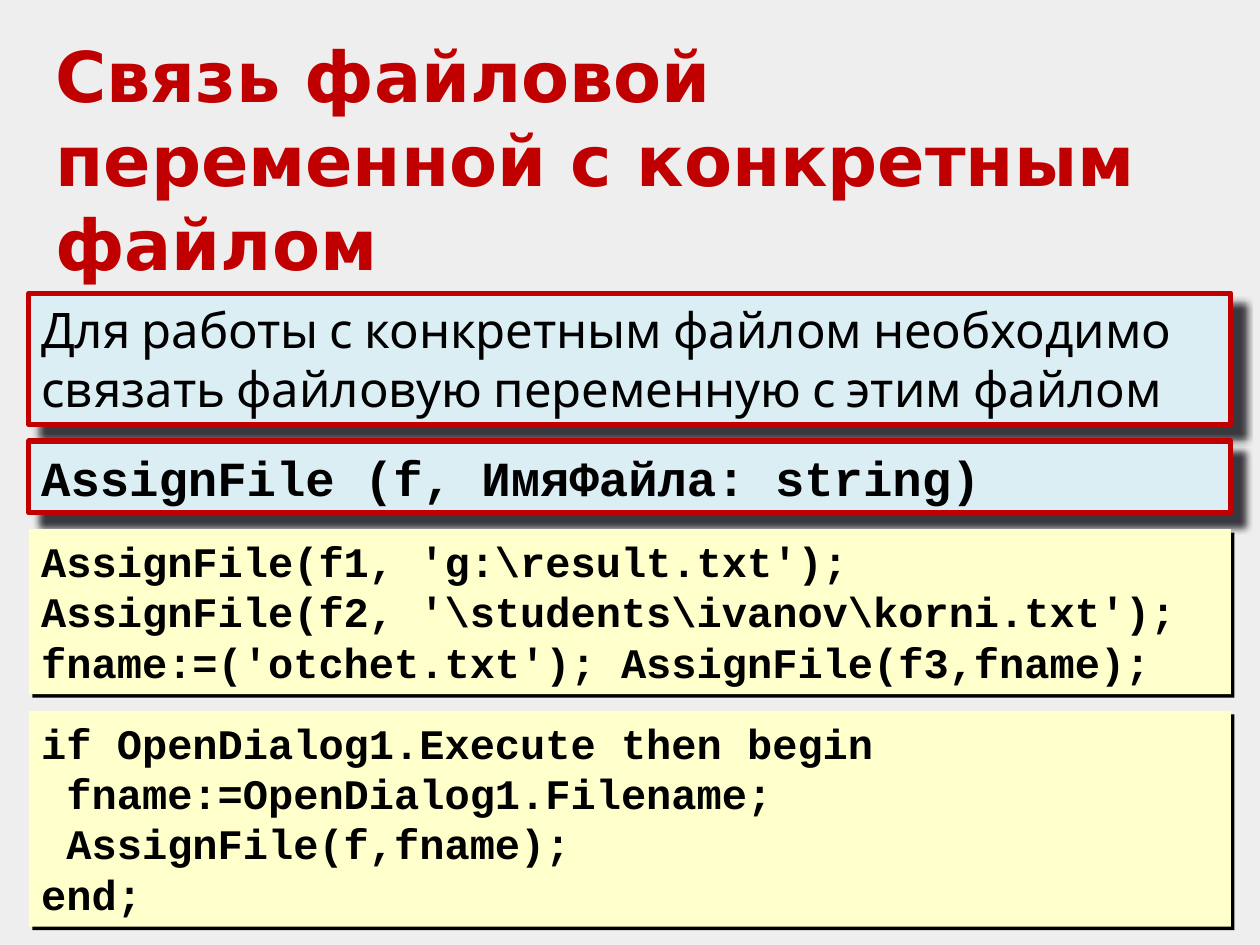
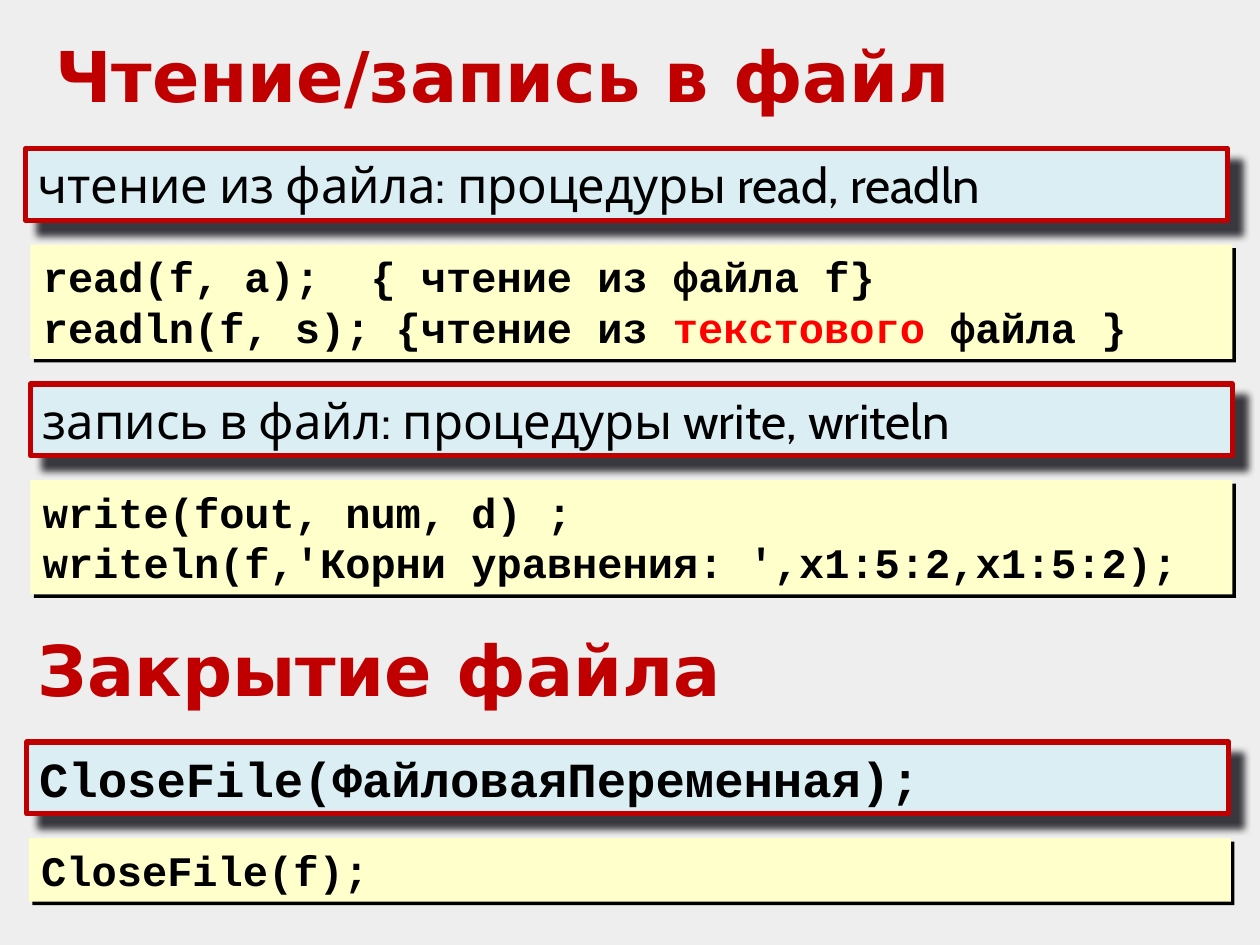
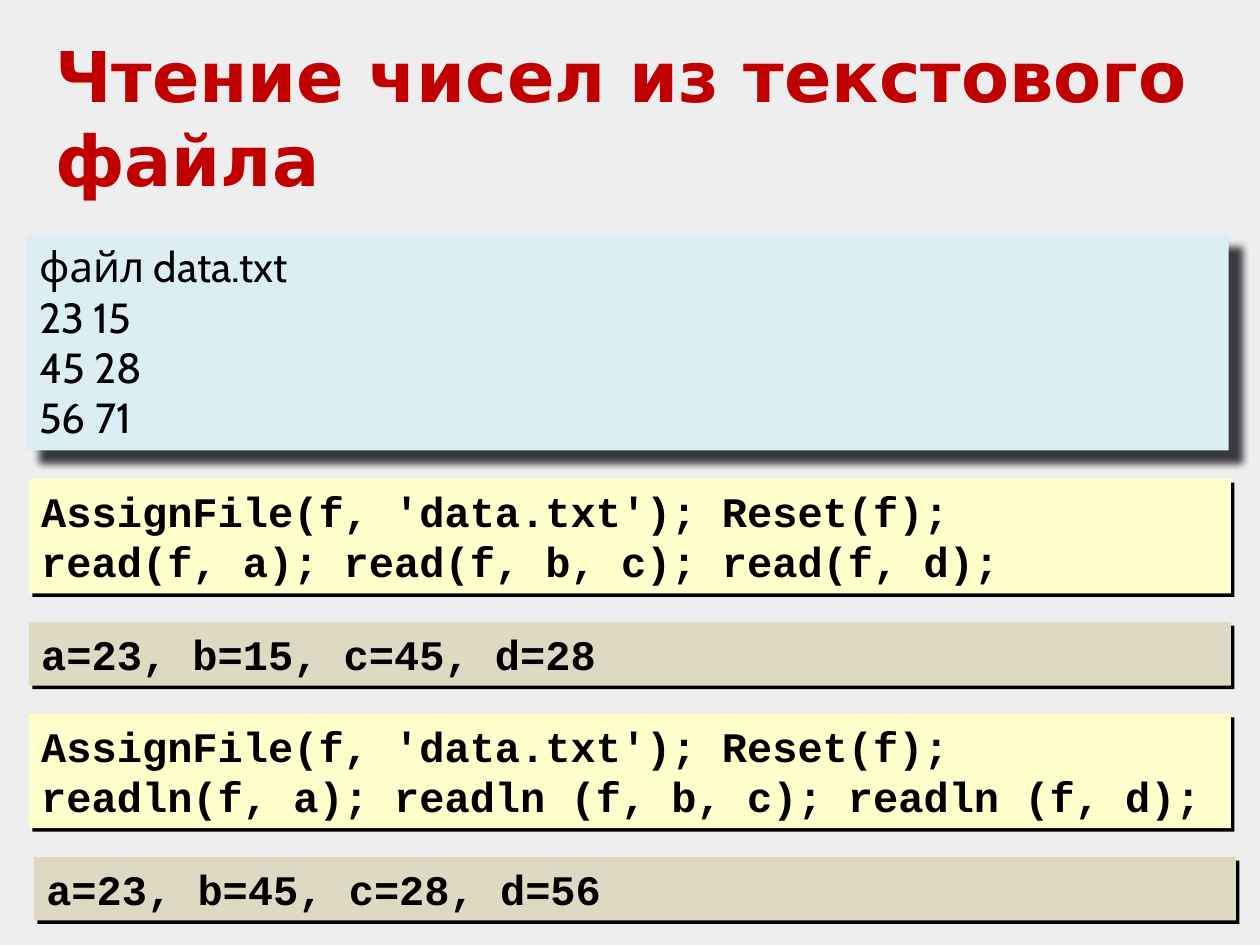
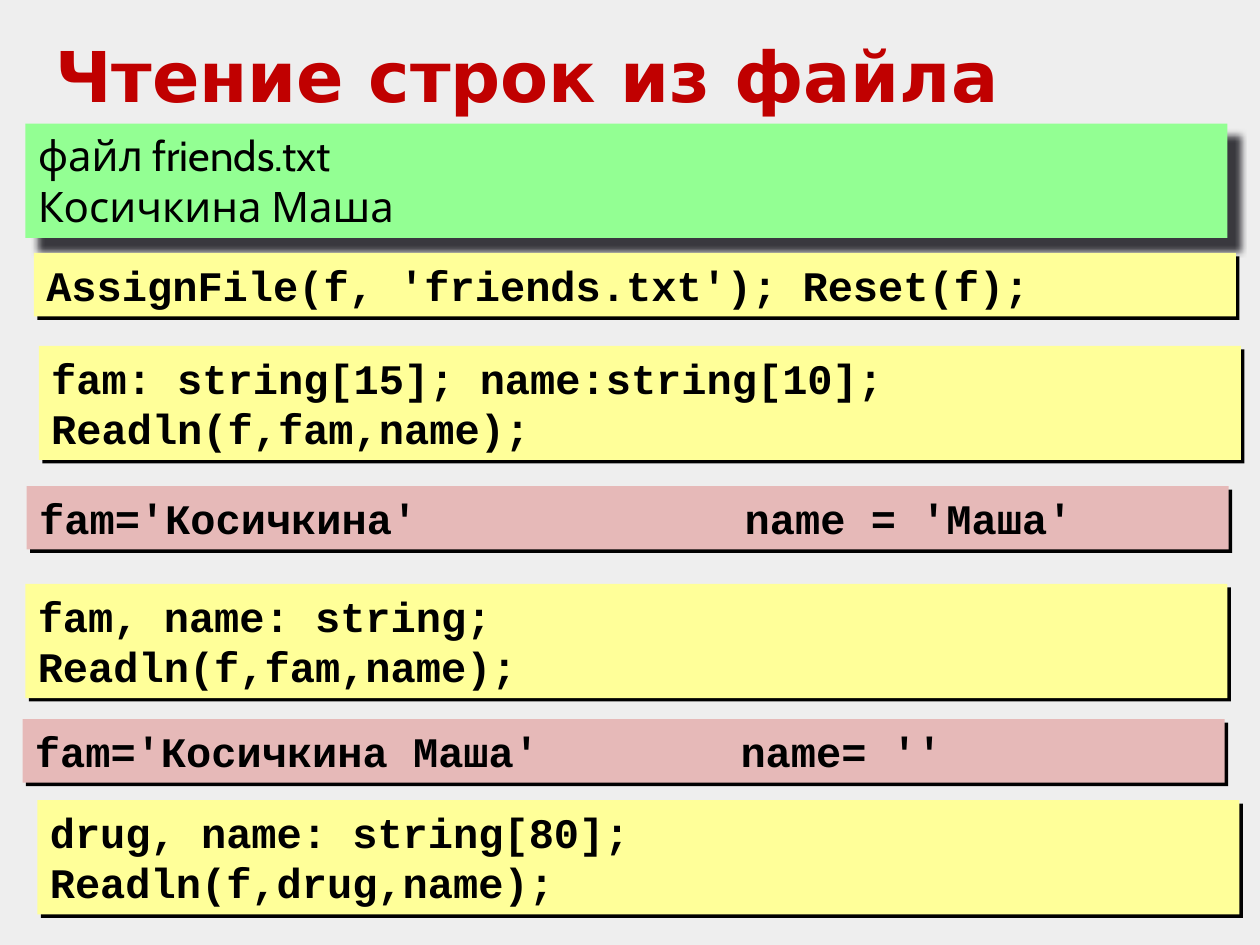
"""Build four slides on reading and writing files."""
from dataclasses import dataclass

from lxml.etree import SubElement
from pptx import Presentation
from pptx.dml.color import RGBColor
from pptx.enum.shapes import MSO_SHAPE
from pptx.enum.text import MSO_ANCHOR, MSO_AUTO_SIZE, PP_ALIGN
from pptx.oxml.ns import qn
from pptx.util import Pt


@dataclass(frozen=True)
class Theme:
    """Colours, fonts and sizes shared by all slides."""
    back: str = "EEEEEE"
    red: str = "C00000"
    accent: str = "FF0000"
    text: str = "000000"
    blue: str = "DBEEF4"
    green: str = "93FF93"
    cream: str = "FFFFCC"
    yellow: str = "FFFF99"
    sand: str = "DDD9C3"
    pink: str = "E6B9B8"
    title_font: str = "DejaVu Sans"
    body_font: str = "Cabin"
    code_font: str = "Courier New"
    title_size: int = 40
    rule_size: int = 28
    code_size: int = 24
    leading: float = 1.21
    padding: float = 7.2
    box_width: float = 686.9
    name_tab: float = 403.2
    soft_shadow: tuple = ("03020A", 76, 4, 10)
    hard_shadow: tuple = ("000000", 100, 0, 2.8)


class Deck:
    """Holds the theme and the current slide and draws each kind of element."""

    def __init__(self, theme):
        """Start an empty 10 by 7.5 inch presentation."""
        self.t = theme
        self.prs = Presentation()
        self.prs.slide_width, self.prs.slide_height = Pt(720), Pt(540)
        self.s = None

    def slide(self, title, lines=1):
        """Add a slide with its background and main title."""
        self.s = self.prs.slides.add_slide(self.prs.slide_layouts[6])
        fill = self.s.background.fill
        fill.solid()
        fill.fore_color.rgb = RGBColor.from_string(self.t.back)
        self.title(title, 24.5, 15.1, lines)

    def height(self, size, lines):
        """Return the height of a box that fits the lines."""
        return Pt(self.t.padding + lines * size * self.t.leading)

    def add_text(self, sp, paragraphs, font, size, color, bold):
        """Fill a shape with paragraphs of strings or (text, colour) runs."""
        tf = sp.text_frame
        tf.word_wrap = True
        tf.auto_size = MSO_AUTO_SIZE.SHAPE_TO_FIT_TEXT
        tf.vertical_anchor = MSO_ANCHOR.TOP
        for i, runs in enumerate(paragraphs):
            p = tf.paragraphs[0] if i == 0 else tf.add_paragraph()
            p.alignment = PP_ALIGN.LEFT
            for text, run_color in [(runs, color)] if isinstance(runs, str) else runs:
                if "\t" in text:
                    self.tab(p)
                r = p.add_run()
                r.text = text
                r.font.name, r.font.size, r.font.bold = font, Pt(size), bold
                r.font.color.rgb = RGBColor.from_string(run_color)

    def tab(self, p):
        """Set the tab stop that aligns the second value of a result."""
        stops = SubElement(p._p.get_or_add_pPr(), qn("a:tabLst"))
        SubElement(stops, qn("a:tab"), pos=str(Pt(self.t.name_tab)), algn="l")

    def shadow(self, sp, color, alpha, blur, dist):
        """Give a shape an outer shadow falling to the lower right."""
        sp.shadow.inherit = False
        effects = sp._element.spPr.find(qn("a:effectLst"))
        outer = SubElement(effects, qn("a:outerShdw"), blurRad=str(Pt(blur)),
                           dist=str(Pt(dist)), dir=str(45 * 60000),
                           algn="tl", rotWithShape="0")
        clr = SubElement(outer, qn("a:srgbClr"), val=color)
        SubElement(clr, qn("a:alpha"), val=str(alpha * 1000))

    def title(self, text, x, y, lines=1):
        """Add a large red heading."""
        t = self.t
        sp = self.s.shapes.add_textbox(Pt(x), Pt(y), Pt(677.5),
                                       self.height(t.title_size, lines))
        self.add_text(sp, [text], t.title_font, t.title_size, t.red, True)

    def box(self, x, y, paragraphs, fill, shadow, font, size, lines=None, border=False):
        """Add a filled box as tall as its text."""
        t = self.t
        sp = self.s.shapes.add_shape(MSO_SHAPE.RECTANGLE, Pt(x), Pt(y), Pt(t.box_width),
                                     self.height(size, lines or len(paragraphs)))
        sp.fill.solid()
        sp.fill.fore_color.rgb = RGBColor.from_string(fill)
        if border:
            sp.line.color.rgb = RGBColor.from_string(t.red)
            sp.line.width = Pt(3)
        else:
            sp.line.fill.background()
        self.shadow(sp, *shadow)
        self.add_text(sp, paragraphs, font, size, t.text, font == t.code_font)

    def rule(self, x, y, text, font=None, lines=1):
        """Add a red-framed statement."""
        t = self.t
        self.box(x, y, [text], t.blue, t.soft_shadow, font or t.body_font,
                 t.rule_size, lines, True)

    def data(self, x, y, paragraphs, fill):
        """Add a box showing the contents of a file."""
        t = self.t
        self.box(x, y, paragraphs, fill, t.soft_shadow, t.body_font, t.code_size)

    def code(self, x, y, *paragraphs, fill=None):
        """Add a box of code or of its result."""
        t = self.t
        self.box(x, y, paragraphs, fill or t.cream, t.hard_shadow,
                 t.code_font, t.code_size)


def main():
    """Build the slides and save them."""
    t = Theme()
    d = Deck(t)

    d.slide("Связь файловой переменной с конкретным файлом", 3)
    d.rule(16.5, 167.6, "Для работы с конкретным файлом необходимо "
           "связать файловую переменную с этим файлом", lines=2)
    d.rule(16.5, 252, "AssignFile (f, ИмяФайла: string)", t.code_font)
    d.code(16.5, 302.4,
           "AssignFile(f1, 'g:\\result.txt');",
           "AssignFile(f2, '\\students\\ivanov\\korni.txt');",
           "fname:=('otchet.txt'); AssignFile(f3,fname);")
    d.code(16.5, 406.2,
           "if OpenDialog1.Execute then begin",
           " fname:=OpenDialog1.Filename;",
           " AssignFile(f,fname);",
           "end;")

    d.slide("Чтение/запись в файл")
    d.rule(14.5, 84.8, "чтение из файла: процедуры read, readln")
    d.code(17.4, 139.8,
           "read(f, a);  { чтение из файла f}",
           [("readln(f, s); {чтение из ", t.text), ("текстового ", t.accent),
            ("файла }", t.text)])
    d.rule(17.4, 219.4, "запись в файл: процедуры write, writeln")
    d.code(17.4, 274.4,
           "write(fout, num, d) ;",
           "writeln(f,'Корни уравнения: ',x1:5:2,x1:5:2);")
    d.title("Закрытие файла", 14.5, 354.2)
    d.rule(15.3, 424, "CloseFile(ФайловаяПеременная);", t.code_font)
    d.code(16.5, 479, "CloseFile(f);")

    d.slide("Чтение чисел из текстового файла", 2)
    d.data(15.3, 134, ["файл data.txt", "23 15", "45 28", "56 71"], t.blue)
    opening = "AssignFile(f, 'data.txt'); Reset(f);"
    d.code(16.5, 273.8, opening, "read(f, а); read(f, b, с); read(f, d);")
    d.code(16.5, 355.6, "а=23, b=15, с=45, d=28", fill=t.sand)
    d.code(16.5, 408, opening, "readln(f, a); readln (f, b, c); readln (f, d);")
    d.code(19.4, 489.8, "а=23, b=45, с=28, d=56", fill=t.sand)

    d.slide("Чтение строк из файла")
    d.data(14.5, 70.6, ["файл friends.txt", "Косичкина Маша"], t.green)
    reading = "Readln(f,fam,name);"
    d.code(19.4, 144.6, "AssignFile(f, 'friends.txt'); Reset(f);", fill=t.yellow)
    d.code(22.2, 197.6, "fam: string[15]; name:string[10];", reading, fill=t.yellow)
    d.code(15.3, 277.8, "fam='Косичкина'\tname = 'Маша'", fill=t.pink)
    d.code(14.5, 333.6, "fam, name: string;", reading, fill=t.yellow)
    d.code(12.9, 411, "fam='Косичкина Маша'\tname= ''", fill=t.pink)
    d.code(21.4, 457.2, "drug, name: string[80];", "Readln(f,drug,name);", fill=t.yellow)

    d.prs.save("out.pptx")


if __name__ == "__main__":
    main()
